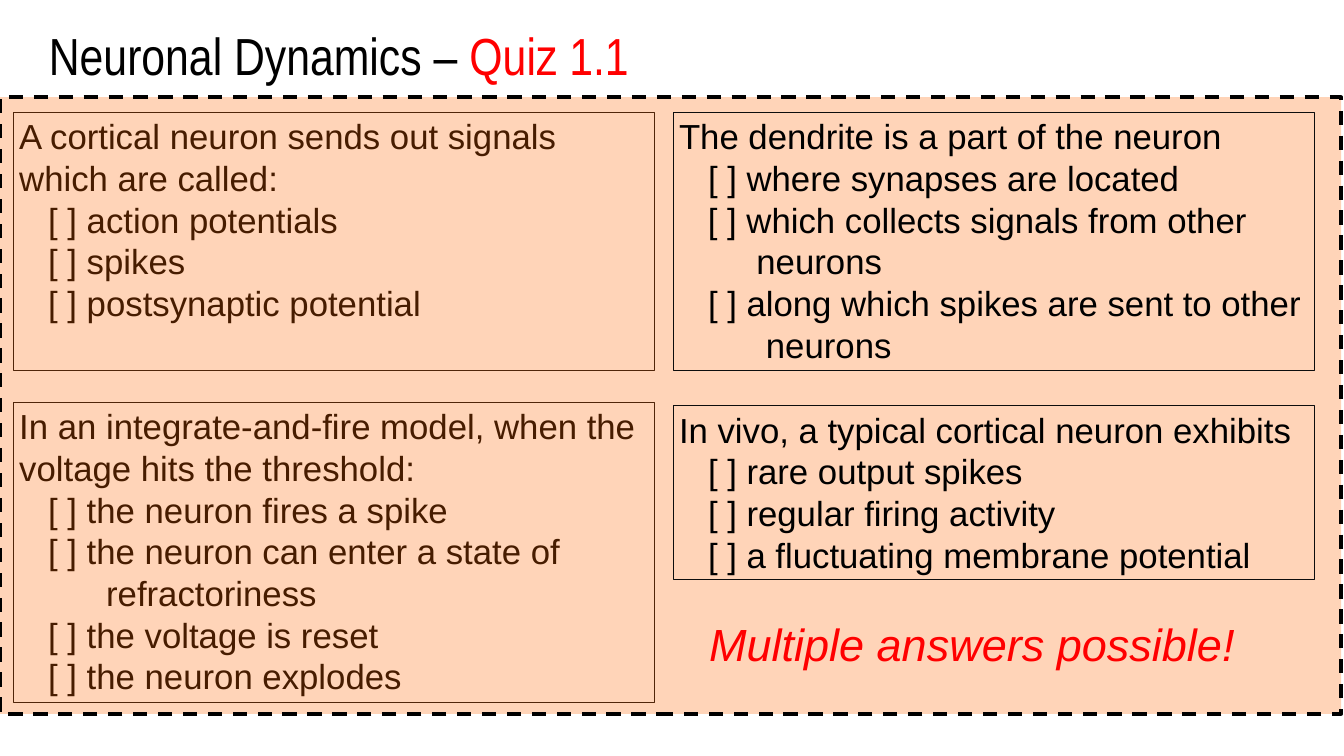
from dataclasses import dataclass

from lxml import etree
from pptx import Presentation
from pptx.dml.color import RGBColor as RGB
from pptx.enum.dml import MSO_LINE
from pptx.enum.shapes import MSO_SHAPE as SHAPE
from pptx.enum.text import MSO_ANCHOR as ANCHOR, MSO_AUTO_SIZE as AUTO_SIZE, PP_ALIGN as ALIGN
from pptx.oxml.ns import qn
from pptx.util import Pt


@dataclass(frozen=True)
class Theme:
    black: RGB = RGB(0x00, 0x00, 0x00)
    red: RGB = RGB(0xFF, 0x00, 0x00)
    orange: RGB = RGB(0xFF, 0x66, 0x00)
    outline: RGB = RGB(0x0D, 0x0D, 0x0D)
    body_font: str = "Arial"
    title_font: str = "Arial Narrow"
    title_size: int = 66
    body_size: int = 44
    hint_size: int = 57


theme = Theme()
BOX_WIDTH = 810.72
LEFT, RIGHT = 17.28, 852.48
ANSWER_INDENT = 36.7


def style_run(run, font, size, color):
    run.font.name = font
    run.font.size = Pt(size)
    run.font.color.rgb = color


def add_question(slide, left, top, height, question, answers):
    """Each answer comes with the indent of its wrapped lines."""
    box = slide.shapes.add_shape(SHAPE.RECTANGLE, Pt(left), Pt(top), Pt(BOX_WIDTH), Pt(height))
    box.shadow.inherit = False
    box.fill.background()
    box.line.color.rgb = theme.outline
    box.line.width = Pt(0.75)
    frame = box.text_frame
    frame.word_wrap = True
    frame.vertical_anchor = ANCHOR.TOP
    frame.margin_top = frame.margin_bottom = Pt(3.6)
    frame.text = "\n".join([question] + [f"[ ] {answer}" for answer, _ in answers])
    for paragraph in frame.paragraphs:
        paragraph.alignment = ALIGN.LEFT
        style_run(paragraph.runs[0], theme.body_font, theme.body_size, theme.black)
    for paragraph, (_, hanging) in zip(frame.paragraphs[1:], answers):
        properties = paragraph._p.get_or_add_pPr()
        properties.set("marL", str(Pt(hanging)))
        properties.set("indent", str(Pt(ANSWER_INDENT - hanging)))


presentation = Presentation()
presentation.slide_width, presentation.slide_height = Pt(1701.36), Pt(956.88)
slide = presentation.slides.add_slide(presentation.slide_layouts[5])

# Title
title = slide.shapes.title
title.left, title.top, title.width, title.height = Pt(54.72), Pt(25.2), Pt(1642.32), Pt(115.92)
frame = title.text_frame
frame.auto_size = AUTO_SIZE.NONE
frame.word_wrap = True
frame.vertical_anchor = ANCHOR.TOP
frame.margin_top = Pt(4.5)
paragraph = frame.paragraphs[0]
paragraph.alignment = ALIGN.LEFT
for text, color in (("Neuronal Dynamics – ", theme.black), ("Quiz 1.1", theme.red)):
    run = paragraph.add_run()
    run.text = text
    style_run(run, theme.title_font, theme.title_size, color)

# Left questions, behind the tinted panel
add_question(slide, LEFT, 141.84, 326.88,
             "A cortical neuron sends out signals which are called:",
             [("action potentials", ANSWER_INDENT),
              ("spikes", ANSWER_INDENT),
              ("postsynaptic potential", ANSWER_INDENT)])
add_question(slide, LEFT, 509.04, 380.16,
             "In an integrate-and-fire model, when the voltage hits the threshold:",
             [("the neuron fires a spike", ANSWER_INDENT),
              ("the neuron can enter a state of refractoriness", 110),
              ("the voltage is reset", ANSWER_INDENT),
              ("the neuron explodes", ANSWER_INDENT)])

# Tinted panel with dashed border
panel = slide.shapes.add_shape(SHAPE.RECTANGLE, Pt(0), Pt(123.12), Pt(1697.76), Pt(780.48))
panel.shadow.inherit = False
panel.fill.solid()
panel.fill.fore_color.rgb = theme.orange
tint = panel.fill._xPr.find(qn("a:solidFill"))[0]
etree.SubElement(tint, qn("a:alpha")).set("val", "28000")
panel.line.color.rgb = theme.black
panel.line.width = Pt(4.5)
panel.line.dash_style = MSO_LINE.DASH

# Right questions, in front of the panel
add_question(slide, RIGHT, 141.84, 326.88,
             "The dendrite is a part of the neuron",
             [("where synapses are located", ANSWER_INDENT),
              ("which collects signals from other neurons", 98),
              ("along which spikes are sent to other neurons", 110)])
add_question(slide, RIGHT, 513.36, 220.32,
             "In vivo, a typical cortical neuron exhibits",
             [("rare output spikes", ANSWER_INDENT),
              ("regular firing activity", ANSWER_INDENT),
              ("a fluctuating membrane potential", ANSWER_INDENT)])

# Hint
hint = slide.shapes.add_textbox(Pt(890.64), Pt(776.88), Pt(686.88), Pt(76.32))
frame = hint.text_frame
frame.word_wrap = False
frame.vertical_anchor = ANCHOR.MIDDLE
frame.text = "Multiple answers possible!"
run = frame.paragraphs[0].runs[0]
style_run(run, theme.body_font, theme.hint_size, theme.red)
run.font.italic = True

presentation.save("out.pptx")
